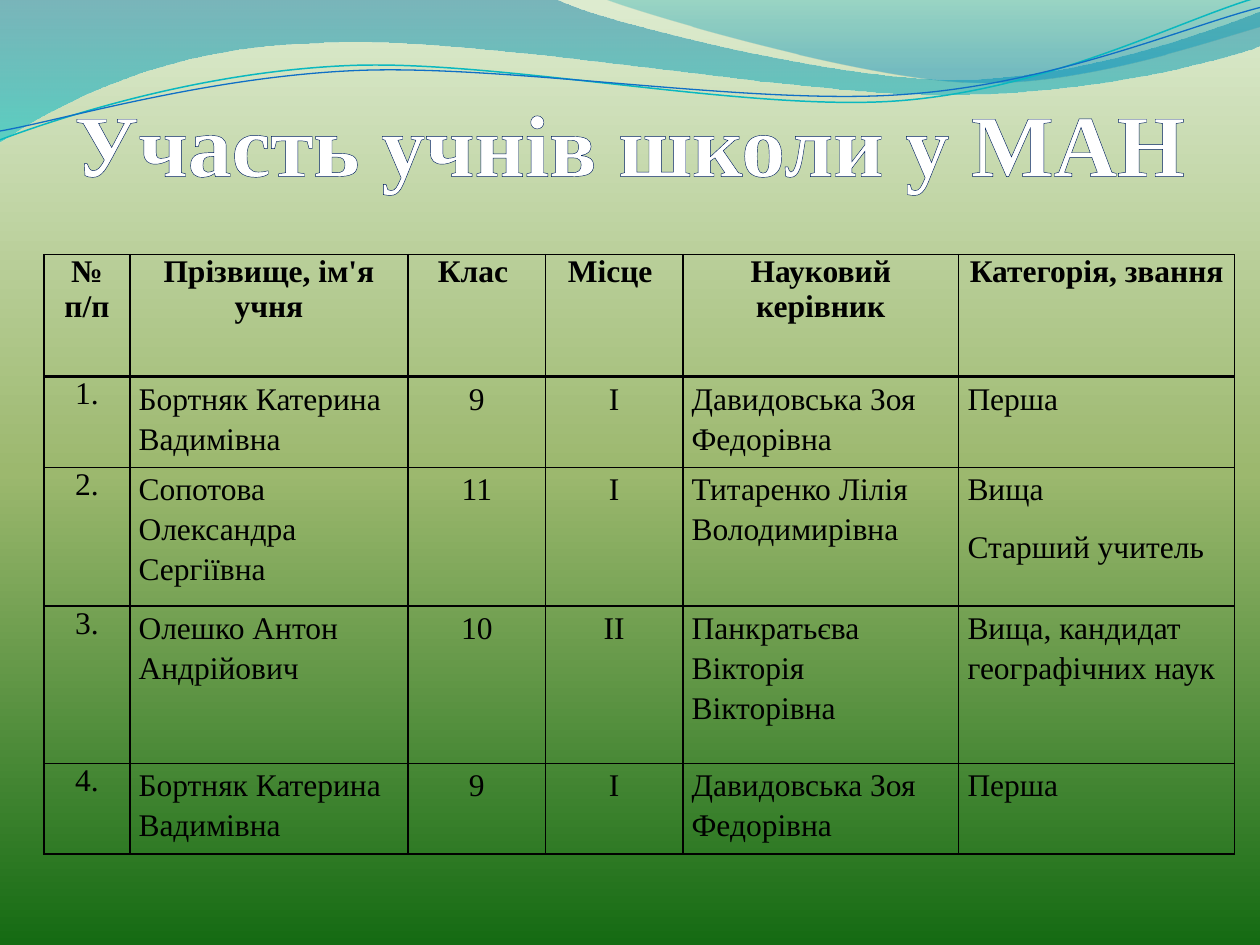
from math import cos, radians, sin

from lxml.etree import SubElement
from pptx import Presentation
from pptx.dml.color import RGBColor
from pptx.enum.text import MSO_ANCHOR, PP_ALIGN
from pptx.oxml.ns import qn
from pptx.util import Inches, Pt

FONT = "Times New Roman"
BLACK = RGBColor(0x00, 0x00, 0x00)
WHITE = RGBColor(0xFF, 0xFF, 0xFF)
NAVY = RGBColor(0x00, 0x20, 0x60)
TEAL = RGBColor(0x0A, 0xB8, 0xBF)
BLUE = RGBColor(0x0F, 0x6F, 0xC6)

# Gradient stops: position %, colour, opacity %
MEADOW = [(0, RGBColor(0xDD, 0xEB, 0xCF), 100),
          (50, RGBColor(0x9C, 0xB8, 0x6E), 100),
          (100, RGBColor(0x15, 0x6B, 0x13), 100)]
WIDE_SWOOSH = [(0, RGBColor(0x00, 0x74, 0xA1), 45),
               (100, RGBColor(0x00, 0xC6, 0xCF), 55)]
RIGHT_SWOOSH = [(0, RGBColor(0x00, 0xA1, 0xA9), 30),
                (80, RGBColor(0x00, 0x8B, 0xBF), 45)]

# Outlines: start point, then lines (1 point) and cubic curves (3 points)
WIDE_OUTLINE = [[(0, 0)], [(4.4, -0.01)],
                [(4.76, 0.17), (6.64, 0.63), (7.58, 0.63)],
                [(8.53, 0.63), (9.58, 0.26), (10, 0.09)], [(10.01, 0.36)],
                [(9.83, 0.44), (8.7, 0.76), (7.46, 0.75)],
                [(6.22, 0.75), (3.82, 0.28), (2.57, 0.34)],
                [(1.29, 0.36), (0.46, 0.83), (-0.01, 1.13)], [(0, 0)]]
RIGHT_OUTLINE = [[(4.79, -0.01)],
                 [(5.09, 0.11), (6.82, 0.62), (7.69, 0.65)],
                 [(8.56, 0.69), (9.61, 0.32), (10, 0.21)],
                 [(10, 0)], [(4.79, -0.01)]]
TEAL_WAVE = [[(0, 1.11)],
             [(0.48, 0.93), (1.58, 0.57), (2.77, 0.52)],
             [(3.95, 0.47), (5.93, 0.89), (7.13, 0.8)],
             [(8.33, 0.71), (9.38, 0.15), (9.98, -0.02)]]
BLUE_WAVE = [[(0, 1.04)],
             [(0.47, 0.96), (1.64, 0.61), (2.83, 0.56)],
             [(4.03, 0.51), (5.97, 0.84), (7.17, 0.75)],
             [(8.36, 0.67), (9.41, 0.21), (10, 0.06)]]
WAVE_TILT = 2.7

COLUMN_WIDTHS = [0.68, 2.21, 1.09, 1.09, 2.19, 2.19]
ROW_HEIGHTS = [0.97, 0.72, 1.1, 1.25, 0.72]
CENTERED_COLUMNS = (0, 2, 3)
ROWS = [
    ["№\nп/п", "Прізвище, ім'я учня", "Клас ", "Місце ",
     "Науковий керівник", "Категорія, звання"],
    ["1.", "Бортняк Катерина Вадимівна", "9", "І",
     "Давидовська Зоя Федорівна", "Перша"],
    ["2.", "Сопотова Олександра Сергіївна", "11", "І",
     "Титаренко Лілія Володимирівна", "Вища\nСтарший учитель"],
    ["3.", "Олешко Антон Андрійович", "10", "ІІ",
     "Панкратьєва Вікторія Вікторівна", "Вища, кандидат географічних наук"],
    ["4.", "Бортняк Катерина Вадимівна", "9", "І",
     "Давидовська Зоя Федорівна", "Перша"],
]


def add_solid(parent, color):
    solid = SubElement(parent, qn("a:solidFill"))
    SubElement(solid, qn("a:srgbClr"), val=str(color))


def set_gradient(fill, owner, stops):
    """Fill from top to bottom with any number of stops."""
    fill.gradient()
    fill.gradient_angle = 270
    stop_list = owner.find(".//" + qn("a:gsLst"))
    for old_stop in list(stop_list):
        stop_list.remove(old_stop)
    for position, color, opacity in stops:
        stop = SubElement(stop_list, qn("a:gs"), pos=str(position * 1000))
        shade = SubElement(stop, qn("a:srgbClr"), val=str(color))
        if opacity < 100:
            SubElement(shade, qn("a:alpha"), val=str(opacity * 1000))


def add_outline(slide, outline, close):
    """Draw all points as lines, then join each group of three into a curve."""
    start, *rest = [(Inches(x), Inches(y)) for part in outline for x, y in part]
    builder = slide.shapes.build_freeform(*start)
    builder.add_line_segments(rest, close=close)
    shape = builder.convert_to_shape()
    shape.shadow.inherit = False
    lines = iter(shape.element.findall(".//" + qn("a:lnTo")))
    for part in outline[1:]:
        segment = next(lines)
        if len(part) == 3:
            segment.tag = qn("a:cubicBezTo")
            for _ in range(2):
                extra = next(lines)
                segment.append(extra[0])
                extra.getparent().remove(extra)
    return shape


def add_swoosh(slide, outline, stops):
    swoosh = add_outline(slide, outline, True)
    set_gradient(swoosh.fill, swoosh.element, stops)
    swoosh.line.fill.background()


def turn(point, center, degrees):
    angle = radians(degrees)
    dx, dy = point[0] - center[0], point[1] - center[1]
    return (center[0] + dx * cos(angle) - dy * sin(angle),
            center[1] + dx * sin(angle) + dy * cos(angle))


def add_wave(slide, outline, center, color, width):
    level = [[turn(point, center, WAVE_TILT) for point in part] for part in outline]
    wave = add_outline(slide, level, False)
    wave.rotation = 360 - WAVE_TILT
    wave.fill.background()
    wave.line.color.rgb = color
    wave.line.width = Pt(width)


def add_run(paragraph, text, size, color, bold):
    run = paragraph.add_run()
    run.text = text
    run.font.name = FONT
    run.font.size = Pt(size)
    run.font.bold = bold
    run.font.color.rgb = color
    return run


def add_title(slide, text):
    box = slide.shapes.add_textbox(Inches(0.59), Inches(0.29), Inches(9), Inches(1.25))
    frame = box.text_frame
    frame.word_wrap = True
    frame.vertical_anchor = MSO_ANCHOR.BOTTOM
    frame.margin_left = frame.margin_right = frame.margin_bottom = 0
    frame.margin_top = Inches(0.05)
    run = add_run(frame.paragraphs[0], text, 50, WHITE, True)
    # Letter outline
    properties = run.font._element
    outline = SubElement(properties, qn("a:ln"), w=str(Pt(0.75)))
    add_solid(outline, NAVY)
    properties.insert(0, outline)


def set_borders(cell, widths):
    properties = cell._tc.get_or_add_tcPr()
    for side, width in zip("LRTB", widths):
        border = SubElement(properties, qn("a:ln" + side), w=str(Pt(width)))
        add_solid(border, BLACK)


def fill_cell(cell, text, header, centered):
    cell.margin_left = cell.margin_right = Inches(0.07)
    cell.margin_top = cell.margin_bottom = 0
    frame = cell.text_frame
    for index, line in enumerate(text.split("\n")):
        paragraph = frame.add_paragraph() if index else frame.paragraphs[0]
        if centered:
            paragraph.alignment = PP_ALIGN.CENTER
        add_run(paragraph, line, 18, BLACK, header)


def add_participants(slide):
    table = slide.shapes.add_table(
        len(ROWS), len(COLUMN_WIDTHS), Inches(0.35), Inches(2.02),
        Inches(sum(COLUMN_WIDTHS)), Inches(sum(ROW_HEIGHTS))).table
    table.first_row = table.horz_banding = False
    for column, width in zip(table.columns, COLUMN_WIDTHS):
        column.width = Inches(width)
    for r, (height, texts) in enumerate(zip(ROW_HEIGHTS, ROWS)):
        table.rows[r].height = Inches(height)
        for c, text in enumerate(texts):
            cell = table.cell(r, c)
            fill_cell(cell, text, r == 0, r == 0 or c in CENTERED_COLUMNS)
            # A thicker rule separates the header
            set_borders(cell, (1, 1, 2 if r == 1 else 1, 2 if r == 0 else 1))
            cell.fill.background()
            if r and c:
                for paragraph in cell.text_frame.paragraphs:
                    paragraph.line_spacing = 1.15
                    paragraph.space_after = Pt(10)


def main():
    prs = Presentation()
    prs.slide_width, prs.slide_height = Inches(10), Inches(7.5)
    slide = prs.slides.add_slide(prs.slide_layouts[6])

    # Backdrop
    set_gradient(slide.background.fill, slide.element, MEADOW)
    add_swoosh(slide, WIDE_OUTLINE, WIDE_SWOOSH)
    add_swoosh(slide, RIGHT_OUTLINE, RIGHT_SWOOSH)
    add_wave(slide, TEAL_WAVE, (4.99, 0.58), TEAL, 0.85)
    add_wave(slide, BLUE_WAVE, (5, 0.59), BLUE, 0.75)

    # Content
    add_title(slide, "Участь учнів школи у МАН")
    add_participants(slide)
    prs.save("out.pptx")


if __name__ == "__main__":
    main()
